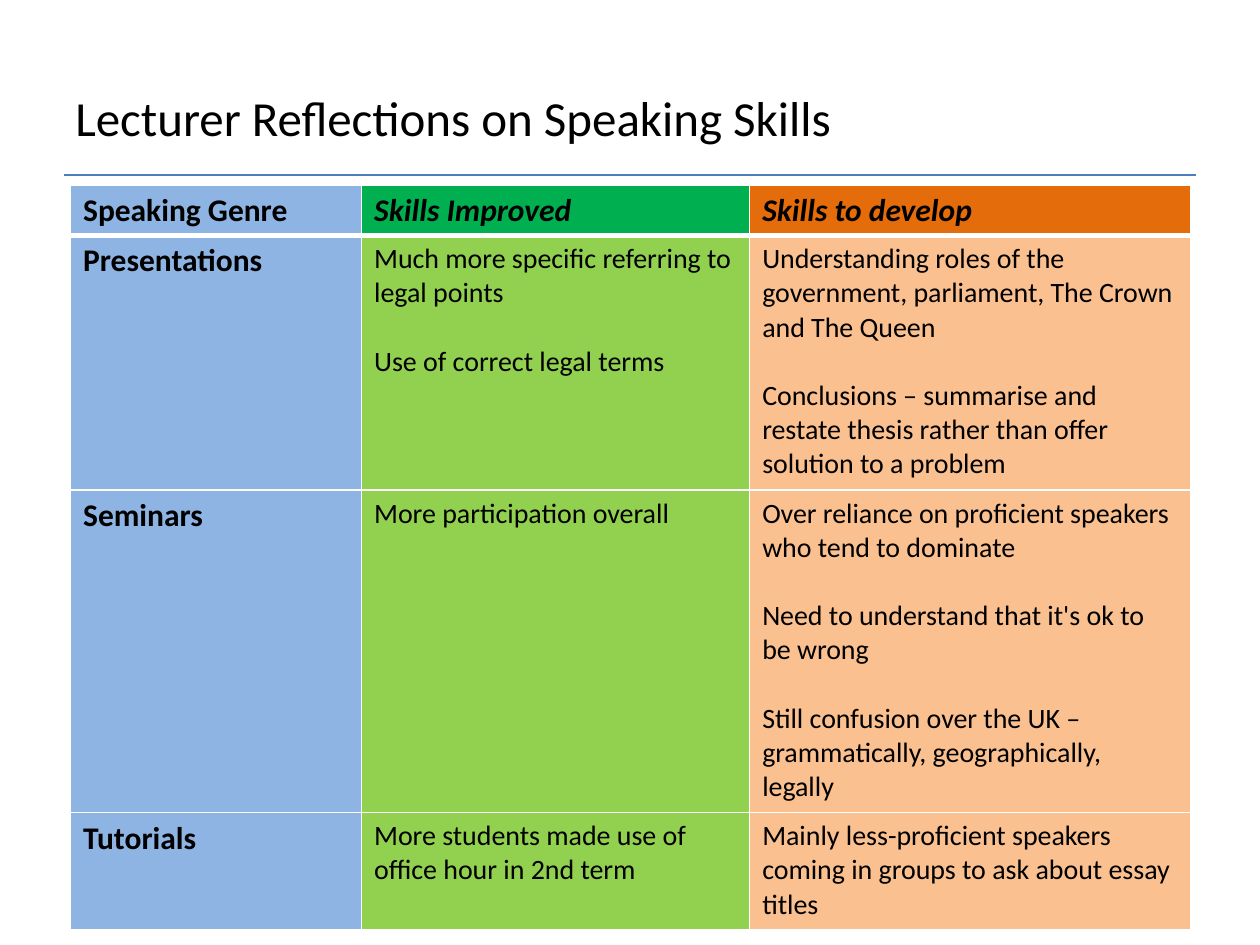
import pptx
import pptx.dml.color
import pptx.enum.shapes
import pptx.enum.text
import pptx.oxml
import pptx.oxml.ns
import pptx.util

WIDTH, HEIGHT = 10, 7.5
TITLE_BOX = (0.5, 0.3, 9, 1.25)
RULE_BOX = (0.51, 1.39, 8.98, 0)
TABLE_BOX = (0.56, 1.47, 8.89, 5.91)
COLUMN_WIDTHS = (2.31, 3.08, 3.5)
ROW_HEIGHTS = (0.4, 2.02, 2.56, 0.93)
HEADER_FILLS = ("8EB4E3", "00B050", "E46C0A")
BODY_FILLS = ("8EB4E3", "92D050", "FAC090")
ROWS = [
    (["Speaking Genre"], ["Skills Improved"], ["Skills to develop"]),
    (
        ["Presentations"],
        ["Much more specific referring to legal points", "Use of correct legal terms"],
        [
            "Understanding roles of the government, parliament, The Crown and The Queen",
            "Conclusions – summarise and restate thesis rather than offer solution to a problem",
        ],
    ),
    (
        ["Seminars"],
        ["More participation overall"],
        [
            "Over reliance on proficient speakers who tend to dominate",
            "Need to understand that it's ok to be wrong",
            "Still confusion over the UK – grammatically, geographically, legally",
        ],
    ),
    (
        ["Tutorials"],
        ["More students made use of office hour in 2nd term"],
        ["Mainly less-proficient speakers coming in groups to ask about essay titles"],
    ),
]


def color(value):
    """Turn a hex string into a colour."""
    return pptx.dml.color.RGBColor.from_string(value)


def inches(box):
    """Turn a sequence of inches into lengths."""
    return [pptx.util.Inches(length) for length in box]


def write(text_frame, paragraphs, size, bold=False, italic=False, gap=0):
    """Write paragraphs in one format, with a gap in points between them."""
    for index, text in enumerate(paragraphs):
        paragraph = text_frame.add_paragraph() if index else text_frame.paragraphs[0]
        if index:
            paragraph.space_before = pptx.util.Pt(gap)
        run = paragraph.add_run()
        run.text = text
        run.font.name = "Calibri"
        run.font.size = pptx.util.Pt(size)
        run.font.bold = bold
        run.font.italic = italic
        run.font.color.rgb = color("000000")


def set_borders(cell, **widths):
    """Draw white cell borders with the given widths in points."""
    properties = cell._tc.get_or_add_tcPr()
    for side in "LRTB":
        width = int(pptx.util.Pt(widths.get(side, 1)))
        properties.append(pptx.oxml.parse_xml(
            f'<a:ln{side} {pptx.oxml.ns.nsdecls("a")} w="{width}"><a:solidFill>'
            f'<a:srgbClr val="FFFFFF"/></a:solidFill></a:ln{side}>'))


def add_title(slide, box, text):
    """Place the slide title, centred vertically in its box."""
    text_frame = slide.shapes.add_textbox(*inches(box)).text_frame
    text_frame.word_wrap = True
    text_frame.vertical_anchor = pptx.enum.text.MSO_ANCHOR.MIDDLE
    write(text_frame, [text], size=28)


def add_rule(slide, box):
    """Draw the thin rule under the title."""
    left, top, width, height = inches(box)
    rule = slide.shapes.add_connector(
        pptx.enum.shapes.MSO_CONNECTOR.STRAIGHT, left, top, left + width, top + height)
    rule.line.color.rgb = color("4B7EBC")
    rule.line.width = pptx.util.Pt(0.75)
    rule._element.spPr.append(
        pptx.oxml.parse_xml(f'<a:effectLst {pptx.oxml.ns.nsdecls("a")}/>'))


def add_skills_table(slide, box):
    """Place the table of skills by speaking genre."""
    table = slide.shapes.add_table(len(ROWS), len(COLUMN_WIDTHS), *inches(box)).table
    for column, width in zip(table.columns, inches(COLUMN_WIDTHS)):
        column.width = width
    for row, height in zip(table.rows, inches(ROW_HEIGHTS)):
        row.height = height
    for row_index, row in enumerate(ROWS):
        header = row_index == 0
        fills = HEADER_FILLS if header else BODY_FILLS
        for column_index, paragraphs in enumerate(row):
            cell = table.cell(row_index, column_index)
            label = header or column_index == 0
            set_borders(cell, B=3 if header else 1, T=3 if row_index == 1 else 1)
            cell.fill.solid()
            cell.fill.fore_color.rgb = color(fills[column_index])
            write(cell.text_frame, paragraphs, size=18 if label else 16, bold=label,
                  italic=header and column_index > 0, gap=19.5)


def main():
    """Build and save the presentation."""
    presentation = pptx.Presentation()
    presentation.slide_width, presentation.slide_height = inches((WIDTH, HEIGHT))
    slide = presentation.slides.add_slide(presentation.slide_layouts[6])
    add_rule(slide, RULE_BOX)
    add_title(slide, TITLE_BOX, "Lecturer Reflections on Speaking Skills")
    add_skills_table(slide, TABLE_BOX)
    presentation.save("out.pptx")


if __name__ == "__main__":
    main()
